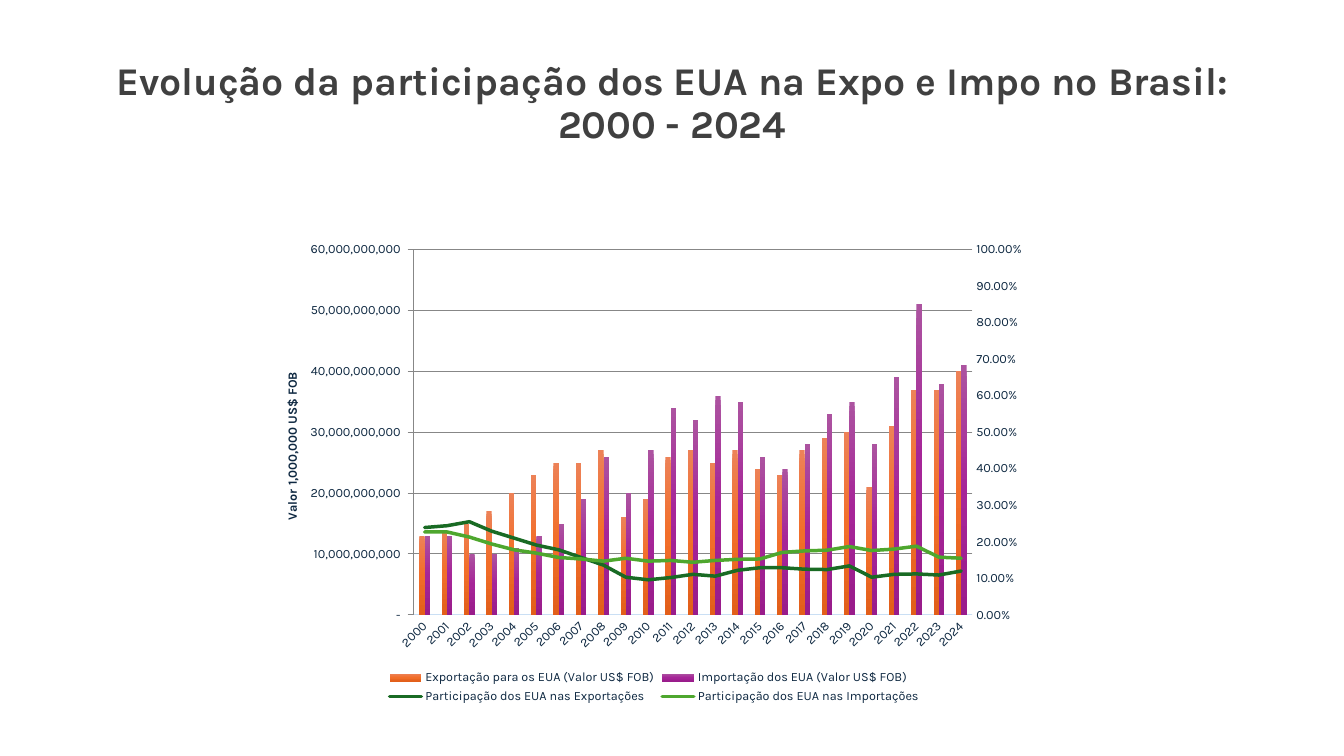
from copy import deepcopy
from dataclasses import dataclass

from pptx import Presentation
from pptx.chart.axis import ValueAxis
from pptx.chart.data import CategoryChartData
from pptx.dml.color import RGBColor
from pptx.enum.chart import (XL_CHART_TYPE as ChartType, XL_LEGEND_POSITION as LegendPos,
                             XL_MARKER_STYLE as Marker, XL_TICK_MARK as Tick)
from pptx.enum.text import MSO_ANCHOR as Anchor, PP_ALIGN as Align
from pptx.oxml import parse_xml
from pptx.oxml.ns import nsdecls, qn
from pptx.util import Pt


@dataclass(frozen=True)
class Theme:
    font: str = "Karla"
    title: str = "404040"
    text: str = "0E2841"
    grid: str = "CADFF4"
    bars: tuple = (("ED8257", "F26E29", "E25F1A"), ("AC53A0", "A62598", "991C8B"))
    lines: tuple = ("196B24", "4EA72E")
    title_size: int = 28
    chart_size: int = 9
    rule_width: float = 0.75
    line_width: float = 2.5


THEME = Theme()
BILLION = 10 ** 9
YEARS = [str(year) for year in range(2000, 2025)]
AMOUNTS = {  # US$ billion
    "Exportação para os EUA (Valor US$ FOB)": [
        13, 14, 15, 17, 20, 23, 25, 25, 27, 16, 19, 26, 27,
        25, 27, 24, 23, 27, 29, 30, 21, 31, 37, 37, 40],
    "Importação dos EUA (Valor US$ FOB)": [
        13, 13, 10, 10, 11, 13, 15, 19, 26, 20, 27, 34, 32,
        36, 35, 26, 24, 28, 33, 35, 28, 39, 51, 38, 41],
}
SHARES = {
    "Participação dos EUA nas Exportações": [
        0.239, 0.244, 0.255, 0.229, 0.21, 0.191, 0.178, 0.157, 0.136, 0.103, 0.096, 0.102, 0.111,
        0.106, 0.122, 0.129, 0.129, 0.125, 0.124, 0.134, 0.103, 0.111, 0.112, 0.109, 0.12],
    "Participação dos EUA nas Importações": [
        0.227, 0.227, 0.213, 0.194, 0.178, 0.169, 0.157, 0.153, 0.147, 0.155, 0.147, 0.149, 0.144,
        0.149, 0.152, 0.153, 0.171, 0.175, 0.177, 0.187, 0.176, 0.18, 0.188, 0.158, 0.155],
}
AMOUNT_FORMAT = '_(* #,##0_);_(* \\(#,##0\\);_(* "-"_);_(@_)'
SHARE_FORMAT = "0.00%"


def set_font(font, size, color, bold=False):
    font.name, font.size, font.bold = THEME.font, Pt(size), bold
    font.color.rgb = RGBColor.from_string(color)


def set_line(line, color, width):
    line.color.rgb = RGBColor.from_string(color)
    line.width = Pt(width)


def add_title(s, text):
    tf = s.shapes.add_textbox(Pt(66), Pt(28.75), Pt(828), Pt(91.5)).text_frame
    tf.word_wrap = True
    tf.vertical_anchor = Anchor.MIDDLE
    p = tf.paragraphs[0]
    p.text = text
    p.alignment, p.line_spacing = Align.CENTER, 0.9
    set_font(p.runs[0].font, THEME.title_size, THEME.title, bold=True)


def set_layout(parent, index, **fractions):
    """Place a chart part by fractions of the chart area."""
    for old in parent.findall(qn("c:layout")):
        parent.remove(old)
    target = '<c:layoutTarget val="inner"/>' if "w" in fractions else ""
    sizes = "".join(f'<c:{key} val="{value}"/>' for key, value in fractions.items())
    parent.insert(index, parse_xml(
        f'<c:layout {nsdecls("c")}><c:manualLayout>{target}<c:xMode val="edge"/>'
        f'<c:yMode val="edge"/>{sizes}</c:manualLayout></c:layout>'))


def move_to_lines(chart, count):
    """Turn the last series into lines on a right-hand axis, which is returned."""
    plot_area = chart.plots[0]._element.getparent()
    columns = plot_area.find(qn("c:barChart"))
    lines = parse_xml(
        f'<c:lineChart {nsdecls("c")}><c:grouping val="standard"/><c:varyColors val="0"/>'
        '<c:marker val="1"/><c:axId val="5001"/><c:axId val="5002"/></c:lineChart>')
    for ser in columns.findall(qn("c:ser"))[-count:]:
        for flag in ser.findall(qn("c:invertIfNegative")):
            ser.remove(flag)
        lines.find(qn("c:marker")).addprevious(ser)
    columns.addnext(lines)

    def axis(tag, axis_id, cross_id, hidden, side, crosses):
        return parse_xml(
            f'<c:{tag} {nsdecls("c")}><c:axId val="{axis_id}"/>'
            '<c:scaling><c:orientation val="minMax"/></c:scaling>'
            f'<c:delete val="{hidden}"/><c:axPos val="{side}"/>'
            '<c:majorTickMark val="none"/><c:minorTickMark val="none"/>'
            f'<c:tickLblPos val="nextTo"/><c:crossAx val="{cross_id}"/>'
            f'<c:crosses val="{crosses}"/></c:{tag}>')

    right = axis("valAx", 5002, 5001, 0, "r", "max")
    plot_area.find(qn("c:valAx")).addnext(right)
    right.addnext(axis("catAx", 5001, 5002, 1, "b", "autoZero"))
    return ValueAxis(right)


def style_axis(axis):
    axis.major_tick_mark = axis.minor_tick_mark = Tick.NONE
    set_font(axis.tick_labels.font, THEME.chart_size, THEME.text)


def style_value_axis(axis, top, step, number_format):
    style_axis(axis)
    axis.minimum_scale, axis.maximum_scale, axis.major_unit = 0, top, step
    axis.tick_labels.number_format = number_format
    axis.tick_labels.number_format_is_linked = False
    axis.format.line.fill.background()


def add_axis_title(axis, text):
    tf = axis.axis_title.text_frame
    tf.text = text
    set_font(tf.paragraphs[0].runs[0].font, THEME.chart_size, THEME.text, bold=True)
    body = tf._txBody.find(qn("a:bodyPr"))
    body.set("rot", "-5400000")
    body.set("vert", "horz")
    set_layout(axis.axis_title._element, 1, x=0.02, y=0.38)


def fill_gradient(ser, colors):
    """Fill with three evenly spaced colours from top to bottom."""
    fill = ser.format.fill
    fill.gradient()
    fill.gradient_angle = 270
    stops = ser._element.find(".//" + qn("a:gsLst"))
    stops.append(deepcopy(stops[0]))
    for i, (stop, color) in enumerate(zip(fill.gradient_stops, colors)):
        stop.position = i / 2
        stop.color.rgb = RGBColor.from_string(color)


def add_trade_chart(s):
    data = CategoryChartData()
    data.categories = YEARS
    for name, values in AMOUNTS.items():
        data.add_series(name, [value * BILLION for value in values], AMOUNT_FORMAT)
    for name, values in SHARES.items():
        data.add_series(name, values, SHARE_FORMAT)
    chart = s.shapes.add_chart(ChartType.COLUMN_CLUSTERED, Pt(190), Pt(116),
                               Pt(554.5), Pt(389.5), data).chart
    chart.has_title = False
    set_font(chart.font, THEME.chart_size, THEME.text)
    right_axis = move_to_lines(chart, len(SHARES))
    columns, lines = chart.plots
    set_layout(columns._element.getparent(), 0, x=0.19, y=0.16, w=0.72, h=0.67)

    columns.gap_width, columns.overlap = 219, 0
    columns.vary_by_categories = False
    for ser, colors in zip(columns.series, THEME.bars):
        fill_gradient(ser, colors)
    for ser, color in zip(lines.series, THEME.lines):
        set_line(ser.format.line, color, THEME.line_width)
        ser._element.find(".//" + qn("a:ln")).set("cap", "rnd")
        ser.marker.style = Marker.NONE
        ser.smooth = False

    years, amounts = chart.category_axis, chart.value_axis
    style_axis(years)
    set_line(years.format.line, THEME.grid, THEME.rule_width)
    years._element.find(qn("c:txPr")).find(qn("a:bodyPr")).set("rot", "-2700000")
    style_value_axis(amounts, 60 * BILLION, 10 * BILLION, AMOUNT_FORMAT)
    set_line(amounts.major_gridlines.format.line, THEME.grid, THEME.rule_width)
    add_axis_title(amounts, "Valor 1,000,000 US$ FOB")
    style_value_axis(right_axis, 1, 0.1, SHARE_FORMAT)

    chart.has_legend = True
    chart.legend.position = LegendPos.BOTTOM
    chart.legend.include_in_layout = False
    set_font(chart.legend.font, THEME.chart_size, THEME.text)


def main():
    prs = Presentation()
    prs.slide_width, prs.slide_height = Pt(960), Pt(540)
    s = prs.slides.add_slide(prs.slide_layouts[6])
    add_title(s, "Evolução da participação dos EUA na Expo e Impo no Brasil: 2000 - 2024")
    add_trade_chart(s)
    prs.save("out.pptx")


if __name__ == "__main__":
    main()
